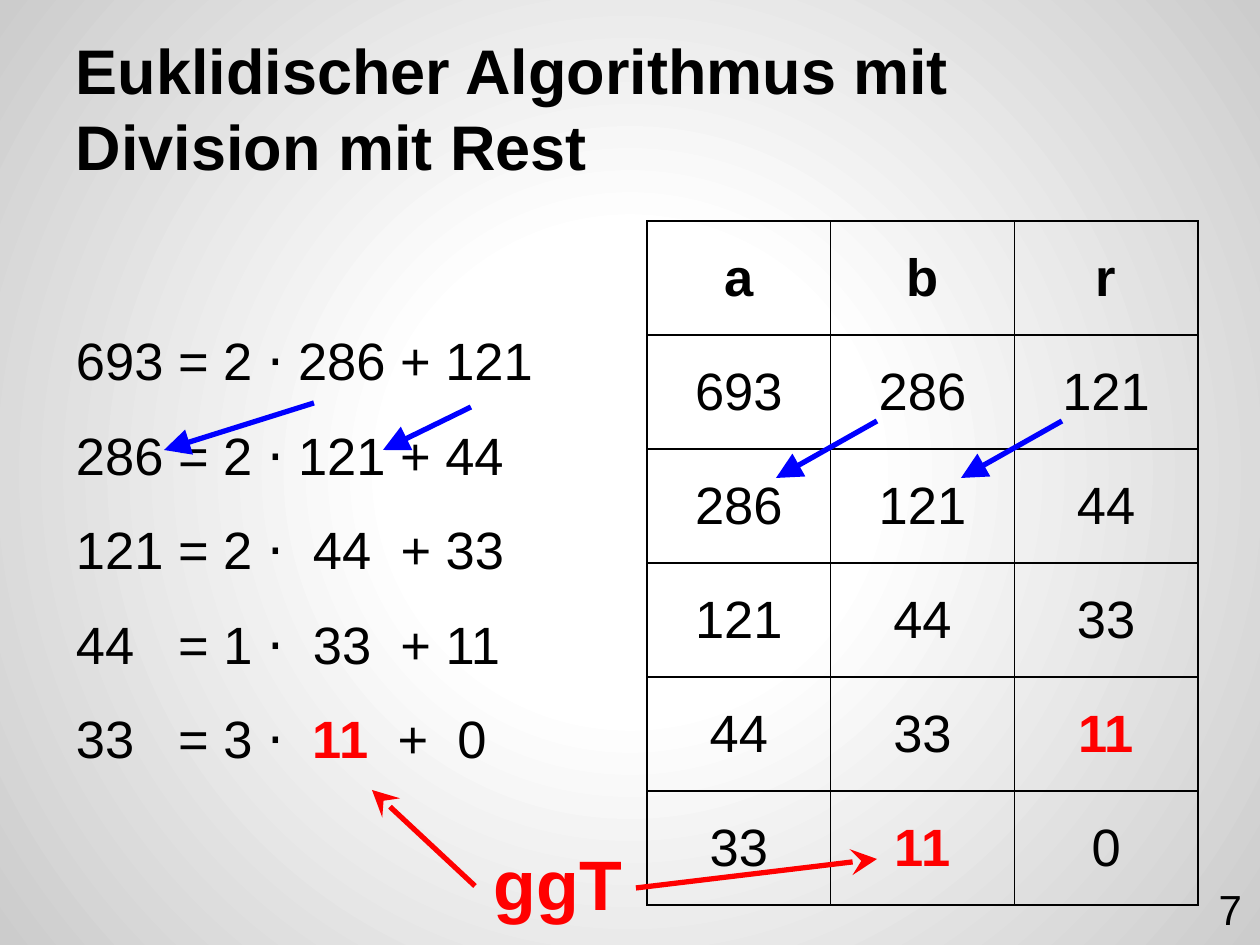
import pptx
import pptx.util
import pptx.oxml
import pptx.oxml.ns
import pptx.dml.color
import pptx.enum.text
import pptx.enum.shapes
import lxml.etree

PX = 914400 / 126
SPACE_WIDTH = 834
COLORS = {"text": "000000", "result": "FF0000", "shift": "0000FF",
          "center": "FFFFFF", "edge": "CCCCCC"}
NS = pptx.oxml.ns.nsdecls("a", "p")
ALIGN = pptx.enum.text.PP_ALIGN
ANCHOR = pptx.enum.text.MSO_ANCHOR


def px(*lengths):
    return [pptx.util.Emu(round(length * PX)) for length in lengths]


def style_font(font, size, color="text", bold=False):
    font.name = "Arial"
    font.size = pptx.util.Pt(size)
    font.bold = bold
    font.color.rgb = pptx.dml.color.RGBColor.from_string(COLORS[color])


deck = pptx.Presentation()
deck.slide_width, deck.slide_height = px(1260, 945)
page = deck.slides.add_slide(deck.slide_layouts[1])
title, body = page.placeholders

stops = "".join(
    f'<a:gs pos="{position}"><a:srgbClr val="{COLORS[name]}"/></a:gs>'
    for position, name in [(0, "center"), (30000, "center"), (100000, "edge")])
background = pptx.oxml.parse_xml(
    f'<p:bg {NS}><p:bgPr><a:gradFill><a:gsLst>{stops}</a:gsLst>'
    '<a:path path="circle"><a:fillToRect l="50000" t="50000" r="50000" b="50000"/></a:path>'
    '</a:gradFill><a:effectLst/></p:bgPr></p:bg>')
page.shapes.title.element.getparent().addprevious(background)

rows = [["a", "b", "r"], ["693", "286", "121"], ["286", "121", "44"],
        ["121", "44", "33"], ["44", "33", "11"], ["33", "11", "0"]]
table = page.shapes.add_table(6, 3, *px(647, 221, 551, 684)).table
table.first_row = table.horz_banding = False
for row, values in enumerate(rows):
    for column, value in enumerate(values):
        cell = table.cell(row, column)
        cell.text = value
        cell.fill.background()
        cell.vertical_anchor = ANCHOR.MIDDLE
        para = cell.text_frame.paragraphs[0]
        para.alignment = ALIGN.CENTER
        is_result = value == "11"
        style_font(para.font, 30, "result" if is_result else "text", is_result or row == 0)
        for index, side in enumerate(["lnL", "lnR", "lnT", "lnB"]):
            cell._tc.get_or_add_tcPr().insert(index, pptx.oxml.parse_xml(
                f'<a:{side} {NS} w="9525"><a:solidFill><a:srgbClr val="{COLORS["text"]}"/>'
                f'</a:solidFill></a:{side}>'))

number = page.shapes.add_textbox(0, 0, 0, 0)
label = page.shapes.add_textbox(0, 0, 0, 0)
boxes = [(title, (63, 38, 1134, 158), ANCHOR.BOTTOM),
         (body, (63, 284, 551, 620), ANCHOR.TOP),
         (label, (481, 828, 175, 117), ANCHOR.TOP),
         (number, (1179, 873, 76, 72), ANCHOR.MIDDLE)]
for box, place, anchor in boxes:
    box.left, box.top, box.width, box.height = px(*place)
    frame = box.text_frame
    frame.word_wrap = True
    frame.auto_size = pptx.enum.text.MSO_AUTO_SIZE.NONE
    frame.vertical_anchor = anchor
    frame.margin_left, frame.margin_top, frame.margin_right, frame.margin_bottom = px(13, 13, 13, 13)

texts = [(title, "Euklidischer Algorithmus mit Division mit Rest", 36, "text", True, ALIGN.LEFT),
         (label, "ggT", 40, "result", True, ALIGN.LEFT),
         (number, "7", 24, "text", False, ALIGN.RIGHT)]
for box, text, size, color, bold, alignment in texts:
    box.text_frame.text = text
    para = box.text_frame.paragraphs[0]
    para.alignment = alignment
    style_font(para.font, size, color, bold)

divisions = [("693", "2", "286", "121"), ("286", "2", "121", "44"), ("121", "2", "44", "33"),
             ("44", "1", "33", "11"), ("33", "3", "11", "0")]
for index, (dividend, quotient, divisor, remainder) in enumerate(divisions):
    para = body.text_frame.paragraphs[0] if index == 0 else body.text_frame.add_paragraph()
    para.line_spacing = 1.5
    para.space_before = pptx.util.Pt(0)
    style_font(para.font, 30)
    properties = para._p.get_or_add_pPr()
    properties.set("marL", "0")
    properties.set("indent", "0")
    default_font = properties.find(pptx.oxml.ns.qn("a:defRPr"))
    default_font.addprevious(pptx.oxml.parse_xml(f"<a:buNone {NS}/>"))
    side_gap = 3 - len(divisor)
    pieces = [(dividend, 2 * (3 - len(dividend))), (f"= {quotient} ⋅", side_gap),
              (divisor, side_gap), ("+", max(0, 2 - len(remainder))), (remainder, None)]
    for text, extra_spaces in pieces:
        span = para.add_run()
        span.text = text
        if text == "11" and remainder == "0":
            style_font(span.font, 30, "result", True)
        if extra_spaces is not None:
            gap = para.add_run()
            gap.text = " "
            if extra_spaces:
                gap._r.get_or_add_rPr().set("spc", str(extra_spaces * SPACE_WIDTH))

arrows = [((314, 403, 164, 450), "shift", "triangle"),
          ((471, 407, 383, 450), "shift", "triangle"),
          ((877, 421, 776, 478), "shift", "triangle"),
          ((1062, 421, 961, 478), "shift", "triangle"),
          ((475, 886, 372, 790), "result", "stealth"),
          ((636, 888, 877, 859), "result", "stealth")]
for ends, color, head in arrows:
    arrow = page.shapes.add_connector(pptx.enum.shapes.MSO_CONNECTOR.STRAIGHT, *px(*ends))
    arrow.line.width = pptx.util.Pt(3)
    arrow.line.color.rgb = pptx.dml.color.RGBColor.from_string(COLORS[color])
    outline = arrow.line._get_or_add_ln()
    lxml.etree.SubElement(outline, pptx.oxml.ns.qn("a:tailEnd"), type=head, w="lg", len="lg")
    lxml.etree.SubElement(arrow.element.spPr, pptx.oxml.ns.qn("a:effectLst"))

deck.save("out.pptx")
